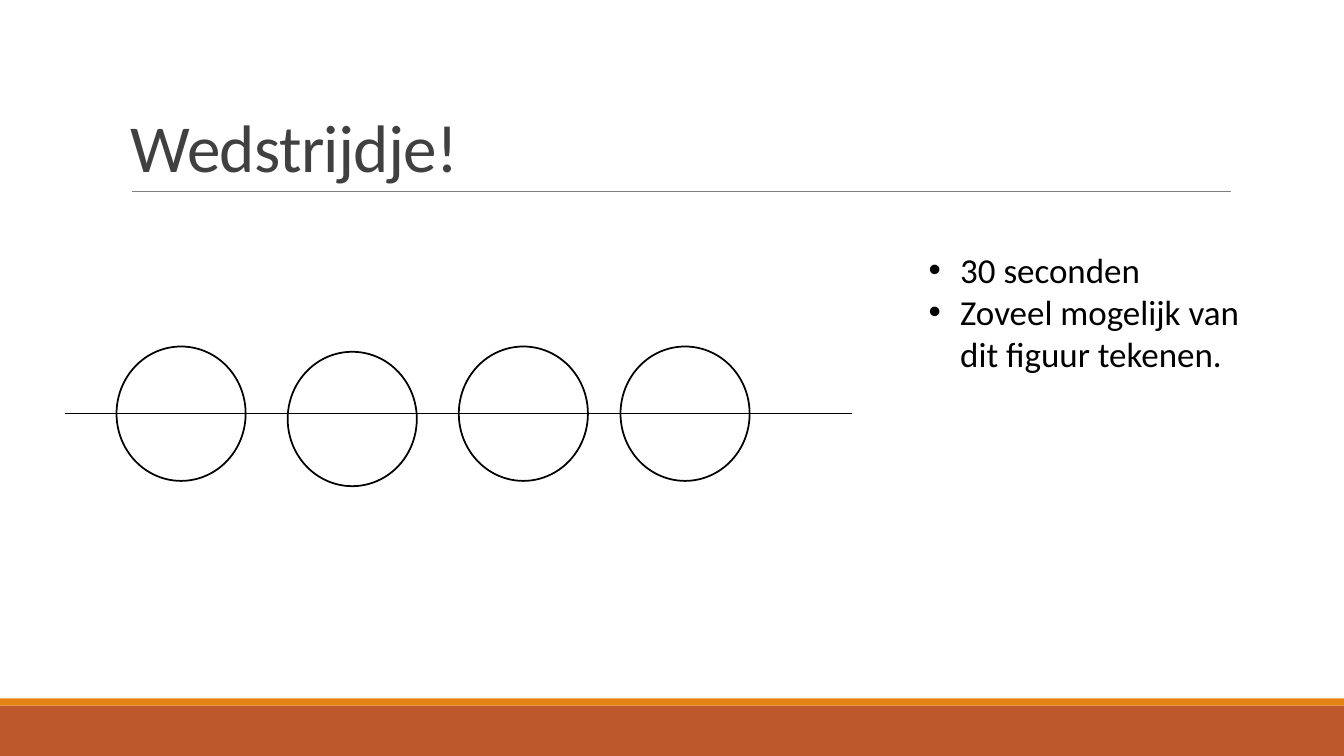
from lxml.etree import SubElement
from pptx import Presentation
from pptx.dml.color import RGBColor
from pptx.enum.shapes import MSO_CONNECTOR as CONN, MSO_SHAPE as SHAPE
from pptx.enum.text import MSO_ANCHOR as ANCHOR
from pptx.oxml.ns import qn
from pptx.util import Emu, Pt

PX = 9525  # 1280 x 720 px slide
BLACK, WHITE = "000000", "FFFFFF"


def px(n):
    return Emu(n * PX)


def color(hex_value):
    return RGBColor.from_string(hex_value)


def add_shape(s, kind, box, fill, line=None, width=1.25):
    sp = s.shapes.add_shape(kind, *map(px, box))
    sp.shadow.inherit = False
    sp.fill.solid()
    sp.fill.fore_color.rgb = color(fill)
    if line:
        sp.line.color.rgb = color(line)
        sp.line.width = Pt(width)
    else:
        sp.line.fill.background()


def add_rule(s, x1, x2, y, line, width):
    c = s.shapes.add_connector(CONN.STRAIGHT, px(x1), px(y), px(x2), px(y))
    c.line.color.rgb = color(line)
    c.line.width = Pt(width)
    SubElement(c._element.spPr, qn("a:effectLst"))


def add_text(s, box, lines, size, fill, anchor=ANCHOR.TOP, spacing=1.0):
    tf = s.shapes.add_textbox(*map(px, box)).text_frame
    tf.word_wrap = True
    tf.vertical_anchor = anchor
    for i, line in enumerate(lines):
        p = tf.paragraphs[0] if i == 0 else tf.add_paragraph()
        p.line_spacing = spacing
        r = p.add_run()
        r.text = line
        font_format = {"name": "Calibri", "size": Pt(size)}
        for key, value in font_format.items():
            setattr(r.font, key, value)
        r.font.color.rgb = color(fill)
    return tf


def add_bullets(tf, indent):
    for p in tf.paragraphs:
        pPr = p._p.get_or_add_pPr()
        pPr.set("marL", str(px(indent)))
        pPr.set("indent", str(px(-indent)))
        SubElement(pPr, qn("a:buFont"), typeface="Arial")
        SubElement(pPr, qn("a:buChar"), char="•")


def main():
    prs = Presentation()
    prs.slide_width, prs.slide_height = px(1280), px(720)
    s = prs.slides.add_slide(prs.slide_layouts[6])

    # Footer bands and title rule
    add_shape(s, SHAPE.RECTANGLE, (0, 672, 1280, 48), "BD582C")
    add_shape(s, SHAPE.RECTANGLE, (0, 665, 1280, 7), "E48312")
    add_rule(s, 126, 1172, 182, "808080", 0.5)

    # Title
    title = add_text(s, (115, 30, 1056, 152), ["Wedstrijdje!"], 48, "404040",
                     ANCHOR.BOTTOM, 0.85)
    title.paragraphs[0].runs[0].font._element.set("spc", "-50")

    # Circles on a line
    for x, y in ((111, 330), (274, 335), (437, 330), (591, 330)):
        add_shape(s, SHAPE.OVAL, (x, y, 123, 128), WHITE, BLACK)
    add_rule(s, 62, 811, 394, BLACK, 1)

    # Assignment
    task = add_text(s, (875, 232, 343, 131),
                    ["30 seconden", "Zoveel mogelijk van dit figuur tekenen."],
                    25, BLACK)
    add_bullets(task, 30)

    prs.save("out.pptx")


if __name__ == "__main__":
    main()
